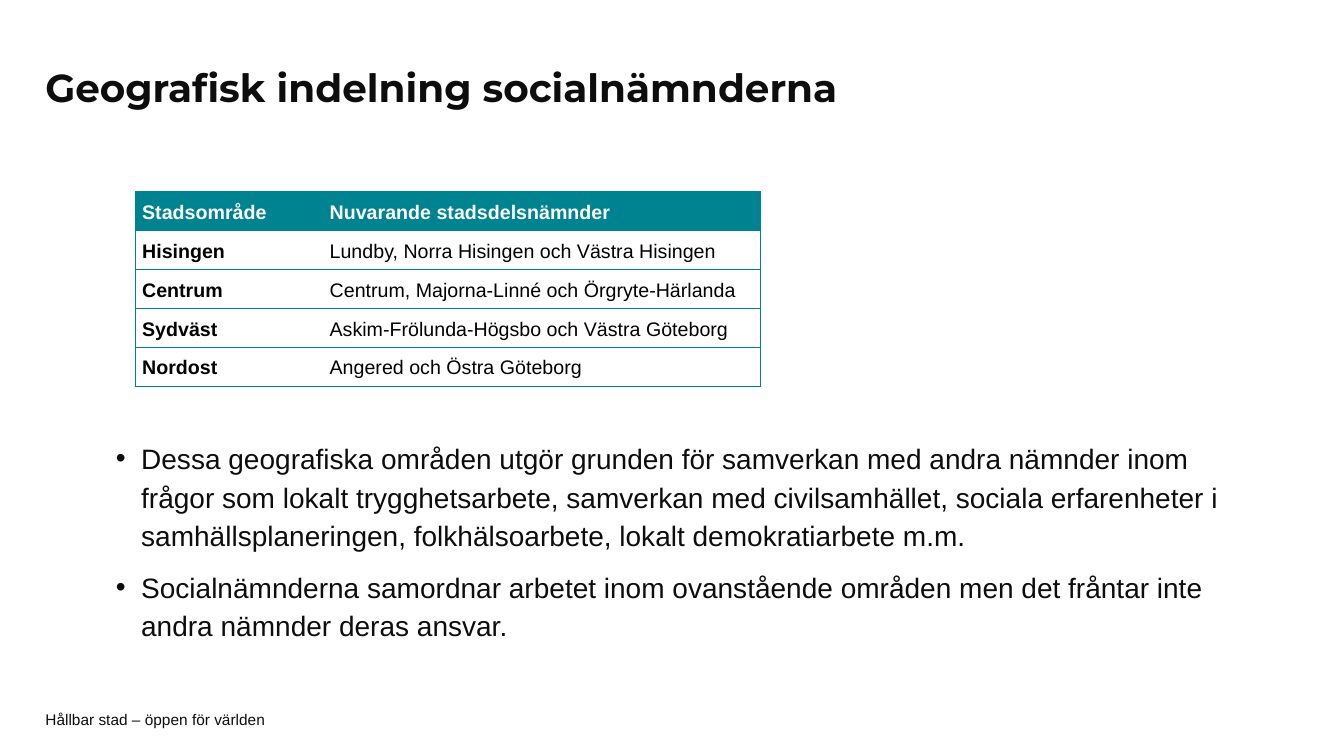
from dataclasses import dataclass

from lxml.etree import SubElement
from pptx import Presentation
from pptx.dml.color import RGBColor
from pptx.enum.text import MSO_ANCHOR
from pptx.oxml.ns import qn
from pptx.util import Inches, Pt


@dataclass(frozen=True)
class Theme:
    ink: RGBColor = RGBColor(0x0D, 0x0D, 0x0D)
    black: RGBColor = RGBColor(0, 0, 0)
    white: RGBColor = RGBColor(255, 255, 255)
    teal: RGBColor = RGBColor(0x00, 0x83, 0x91)
    heading_font: str = "Montserrat"
    text_font: str = "Arial"
    title_size: float = 27.8
    body_size: float = 20
    table_size: float = 14
    footer_size: float = 11
    border_width: float = 0.5


THEME = Theme()

DISTRICTS = [
    ("Stadsområde", "Nuvarande stadsdelsnämnder"),
    ("Hisingen", "Lundby, Norra Hisingen och Västra Hisingen"),
    ("Centrum", "Centrum, Majorna-Linné och Örgryte-Härlanda"),
    ("Sydväst", "Askim-Frölunda-Högsbo och Västra Göteborg"),
    ("Nordost", "Angered och Östra Göteborg"),
]

POINTS = [
    "Dessa geografiska områden utgör grunden för samverkan med andra nämnder inom "
    "frågor som lokalt trygghetsarbete, samverkan med civilsamhället, sociala "
    "erfarenheter i samhällsplaneringen, folkhälsoarbete, lokalt demokratiarbete m.m.",
    "Socialnämnderna samordnar arbetet inom ovanstående områden men det fråntar inte "
    "andra nämnder deras ansvar.",
]


def set_values(target, values):
    for name, value in values.items():
        setattr(target, name, value)


def write_span(para, text, font, size, color, bold=False):
    span = para.add_run()
    span.text = text
    set_values(span.font, {"name": font, "size": Pt(size), "bold": bold})
    span.font.color.rgb = color


def add_frame(page, box, anchor):
    frame = page.shapes.add_textbox(*map(Inches, box)).text_frame
    set_values(frame, {
        "word_wrap": True,
        "vertical_anchor": anchor,
        "margin_left": 0,
        "margin_right": 0,
        "margin_top": 0,
        "margin_bottom": 0,
    })
    return frame


def add_line(page, box, text, font, size, bold=False):
    frame = add_frame(page, box, MSO_ANCHOR.MIDDLE)
    write_span(frame.paragraphs[0], text, font, size, THEME.ink, bold)


def add_bullet(para):
    properties = para._p.get_or_add_pPr()
    properties.set("marL", str(Inches(0.25)))
    properties.set("indent", str(-Inches(0.25)))
    SubElement(properties, qn("a:buFont"), typeface=THEME.text_font)
    SubElement(properties, qn("a:buChar"), char="•")


def add_points(page, box, points):
    frame = add_frame(page, box, MSO_ANCHOR.TOP)
    for index, point in enumerate(points):
        para = frame.add_paragraph() if index else frame.paragraphs[0]
        add_bullet(para)
        set_values(para, {
            "line_spacing": 1.15,
            "space_before": Pt(6 if index else 0),
            "space_after": Pt(3),
        })
        write_span(para, point, THEME.text_font, THEME.body_size, THEME.ink)


def add_borders(cell, sides):
    properties = cell._tc.get_or_add_tcPr()
    for side in ("L", "R", "T", "B"):
        width = Pt(THEME.border_width) if side in sides else 0
        line = SubElement(properties, qn(f"a:ln{side}"), w=str(width))
        if side in sides:
            fill = SubElement(line, qn("a:solidFill"))
            SubElement(fill, qn("a:srgbClr"), val=str(THEME.teal))
        else:
            SubElement(line, qn("a:noFill"))


def add_districts(page, box, rows):
    left, top, width, height = box
    table = page.shapes.add_table(len(rows), 2, *map(Inches, box)).table
    set_values(table, {"first_row": False, "horz_banding": False})
    for column, share in zip(table.columns, (0.3, 0.7)):
        column.width = Inches(width * share)
    for row in table.rows:
        row.height = Inches(height / len(rows))
    for row_index, texts in enumerate(rows):
        header = row_index == 0
        for column_index, text in enumerate(texts):
            cell = table.cell(row_index, column_index)
            set_values(cell, {
                "vertical_anchor": MSO_ANCHOR.MIDDLE,
                "margin_left": Inches(0.07),
                "margin_right": Inches(0.07),
                "margin_top": 0,
                "margin_bottom": 0,
            })
            add_borders(cell, ("R" if column_index else "L") + "TB")
            cell.fill.solid()
            cell.fill.fore_color.rgb = THEME.teal if header else THEME.white
            para = cell.text_frame.paragraphs[0]
            para.line_spacing = 1.15
            write_span(para, text, THEME.text_font, THEME.table_size,
                       THEME.white if header else THEME.black,
                       header or column_index == 0)


def build_page(deck):
    page = deck.slides.add_slide(deck.slide_layouts[6])
    add_line(page, (0.45, 0.44, 10.4, 0.85), "Geografisk indelning socialnämnderna",
             THEME.heading_font, THEME.title_size, True)
    add_districts(page, (1.34, 1.9, 6.2, 1.93), DISTRICTS)
    add_points(page, (1.15, 4.33, 11.02, 2.14), POINTS)
    add_line(page, (0.45, 7.06, 9.45, 0.16), "Hållbar stad – öppen för världen",
             THEME.text_font, THEME.footer_size)


def main():
    deck = Presentation()
    set_values(deck, {"slide_width": Inches(13.33), "slide_height": Inches(7.5)})
    build_page(deck)
    deck.save("out.pptx")


if __name__ == "__main__":
    main()
